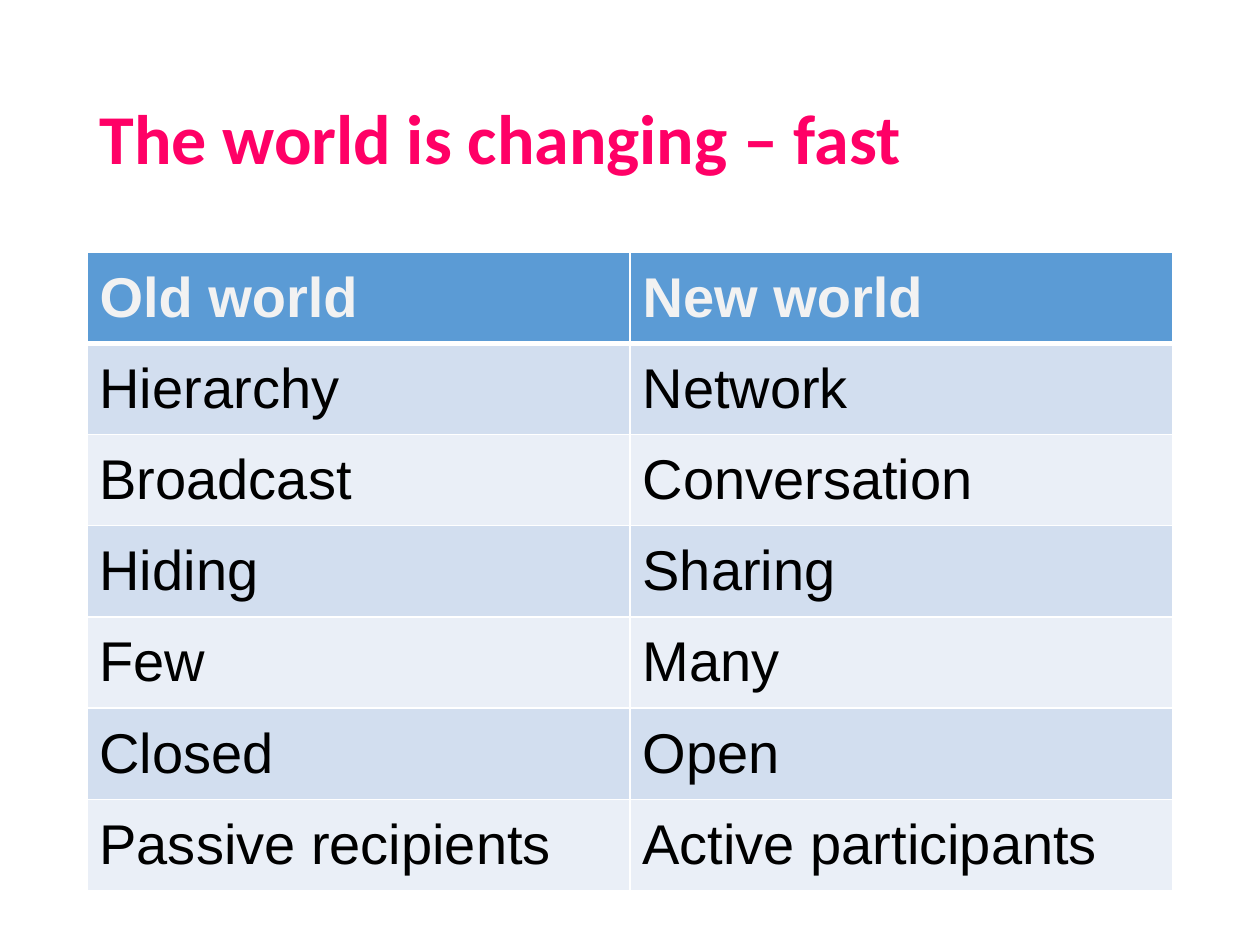
"""Build a slide with a title and a table comparing the old and new worlds."""
import pptx
import pptx.dml.color
import pptx.enum.text
import pptx.oxml
import pptx.oxml.ns
import pptx.util

RGBColor = pptx.dml.color.RGBColor
PINK = RGBColor(0xFF, 0x00, 0x66)
BLUE = RGBColor(0x5B, 0x9B, 0xD5)
BAND_DARK = RGBColor(0xD2, 0xDE, 0xEF)
BAND_LIGHT = RGBColor(0xEA, 0xEF, 0xF7)
OFF_WHITE = RGBColor(0xF2, 0xF2, 0xF2)
WHITE = RGBColor(0xFF, 0xFF, 0xFF)
BLACK = RGBColor(0x00, 0x00, 0x00)

WIDTH = pptx.util.Inches(10)
HEIGHT = pptx.util.Inches(7.5)
MARGIN = pptx.util.Inches(0.69)
CONTENT_WIDTH = WIDTH - 2 * MARGIN

ROWS = [
    ("Old world", "New world"),
    ("Hierarchy", "Network"),
    ("Broadcast", "Conversation"),
    ("Hiding", "Sharing"),
    ("Few", "Many"),
    ("Closed", "Open"),
    ("Passive recipients", "Active participants"),
]


def write_text(tf, text, *, font, size, color, bold=False, spacing=1.0):
    """Write one left-aligned, vertically centred paragraph."""
    tf.word_wrap = True
    p = tf.paragraphs[0]
    p.alignment = pptx.enum.text.PP_ALIGN.LEFT
    p.line_spacing = spacing
    r = p.add_run()
    r.text = text
    r.font.name = font
    r.font.size = pptx.util.Pt(size)
    r.font.bold = bold
    r.font.color.rgb = color


def add_border(cell, side, points):
    """Draw one white border on a side (L, R, T or B) of a cell."""
    cell._tc.get_or_add_tcPr().append(pptx.oxml.parse_xml(
        f'<a:ln{side} {pptx.oxml.ns.nsdecls("a")} w="{pptx.util.Pt(points)}">'
        f'<a:solidFill><a:srgbClr val="{WHITE}"/></a:solidFill></a:ln{side}>'))


def place_title(slide, box):
    """Place the slide title in the given box."""
    sp = slide.shapes.title
    sp.left, sp.top, sp.width, sp.height = box
    sp.text_frame.vertical_anchor = pptx.enum.text.MSO_ANCHOR.MIDDLE
    write_text(sp.text_frame, "The world is changing – fast", font="Calibri",
               size=40, color=PINK, bold=True, spacing=0.9)


def format_cell(cell, text, row):
    """Fill one cell with its text, borders and band colour."""
    header = row == 0
    cell.vertical_anchor = pptx.enum.text.MSO_ANCHOR.MIDDLE
    write_text(cell.text_frame, text, font="Arial", size=32,
               color=OFF_WHITE if header else BLACK, bold=header)
    for side in "LRTB":
        under_header = (row, side) in ((0, "B"), (1, "T"))
        add_border(cell, side, 3 if under_header else 1)
    cell.fill.solid()
    cell.fill.fore_color.rgb = (
        BLUE if header else BAND_DARK if row % 2 else BAND_LIGHT)


def place_comparison(slide, box):
    """Place the comparison table in the given box with equal rows."""
    height = box[3]
    table = slide.shapes.add_table(len(ROWS), len(ROWS[0]), *box).table
    for i, texts in enumerate(ROWS):
        table.rows[i].height = height // len(ROWS)
        for j, text in enumerate(texts):
            format_cell(table.cell(i, j), text, i)


def main():
    """Build the presentation and save it."""
    prs = pptx.Presentation()
    prs.slide_width, prs.slide_height = WIDTH, HEIGHT
    slide = prs.slides.add_slide(prs.slide_layouts[5])
    place_title(slide, (MARGIN, pptx.util.Inches(0.4),
                        CONTENT_WIDTH, pptx.util.Inches(1.45)))
    place_comparison(slide, (MARGIN, pptx.util.Inches(2),
                             CONTENT_WIDTH, pptx.util.Inches(5.07)))
    prs.save("out.pptx")


if __name__ == "__main__":
    main()
